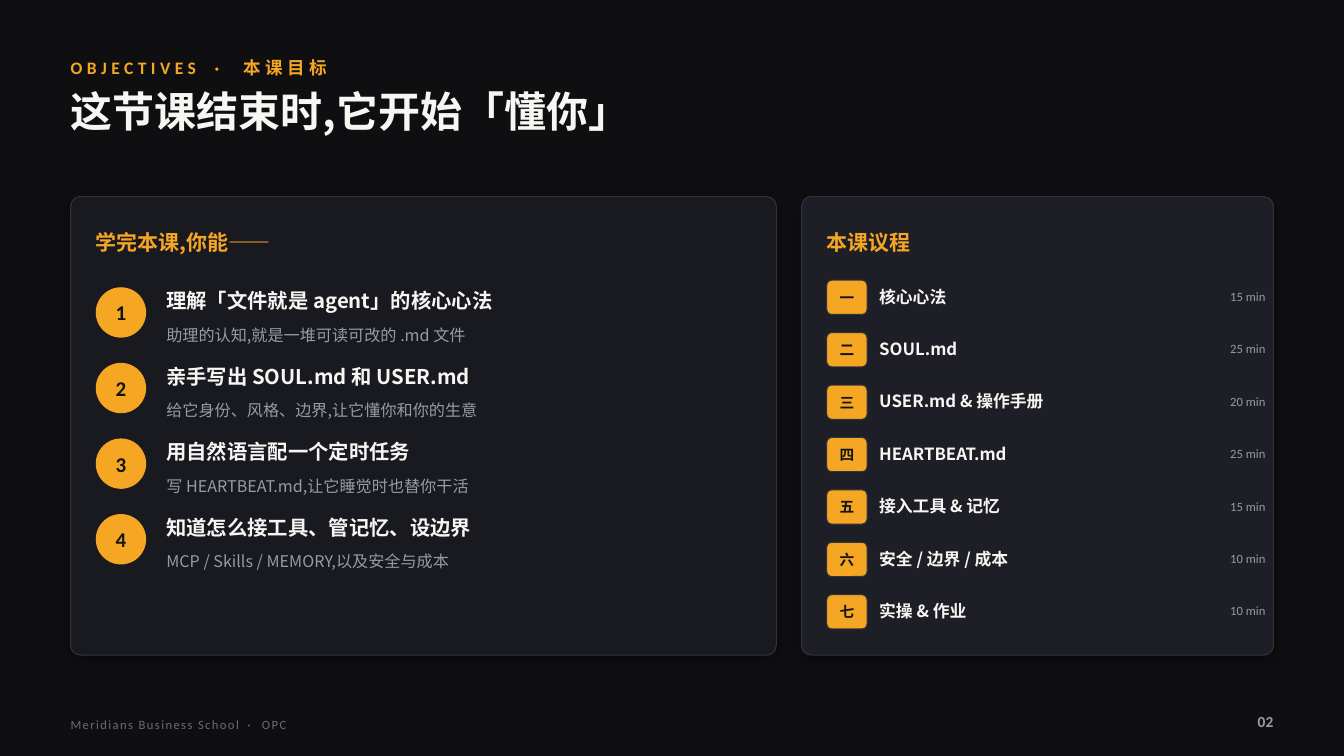
from dataclasses import dataclass

from lxml.etree import SubElement
from pptx import Presentation
from pptx.dml.color import RGBColor
from pptx.enum.shapes import MSO_SHAPE as Shape
from pptx.enum.text import MSO_ANCHOR as Anchor, PP_ALIGN as Align
from pptx.oxml.ns import qn
from pptx.util import Pt

PX = 9144  # 100 px to the inch


@dataclass(frozen=True)
class TextStyle:
    size: float
    color: str
    bold: bool = False
    font: str = "Noto Sans CJK SC"
    spacing: float = 0


class Theme:
    background = "0F0F12"
    panel = "191920"
    panel_raised = "1E1E26"
    border = "33333E"
    accent = "F5A623"
    ink = "141410"
    white = "F6F6F3"
    muted = "9A9AA6"
    faint = "6B6B76"
    east_asian = "Noto Sans CJK SC"

    kicker = TextStyle(12.5, accent, True, "Calibri", 3.2)
    title = TextStyle(30, white, True)
    heading = TextStyle(15, accent, True)
    number = TextStyle(15, ink, True, "Calibri")
    goal = TextStyle(14.5, white, True)
    detail = TextStyle(11.5, muted)
    chapter = TextStyle(10.5, ink, True)
    topic = TextStyle(12, white, True)
    minutes = TextStyle(9, muted, font="Calibri")
    footer = TextStyle(9, faint, font="Calibri", spacing=1)
    page = TextStyle(11, muted, True, "Calibri")


class SlideBuilder:
    def __init__(self, presentation, theme):
        self.theme = theme
        self.slide = presentation.slides.add_slide(presentation.slide_layouts[6])
        fill = self.slide.background.fill
        fill.solid()
        fill.fore_color.rgb = RGBColor.from_string(theme.background)

    def set_line(self, shape, pieces, style, align, anchor=Anchor.MIDDLE):
        """Fill a shape with one line; pieces are (text, letter spacing) pairs."""
        frame = shape.text_frame
        frame.word_wrap = True
        frame.vertical_anchor = anchor
        frame.margin_left = frame.margin_right = 0
        frame.margin_top = frame.margin_bottom = 0
        paragraph = frame.paragraphs[0]
        paragraph.alignment = align
        font = paragraph.font
        font.size, font.bold, font.name = Pt(style.size), style.bold, style.font
        font.color.rgb = RGBColor.from_string(style.color)
        defaults = paragraph._p.pPr.find(qn("a:defRPr"))
        SubElement(defaults, qn("a:ea")).set("typeface", self.theme.east_asian)
        for text, spacing in pieces:
            run = paragraph.add_run()
            run.text = text
            if spacing:
                run._r.get_or_add_rPr().set("spc", str(round(spacing * 100)))

    def text(self, x, y, width, height, text, style, align=Align.LEFT, anchor=Anchor.MIDDLE):
        box = self.slide.shapes.add_textbox(x * PX, y * PX, width * PX, height * PX)
        self.set_line(box, [(text, style.spacing)], style, align, anchor)

    def dotted_pair(self, x, y, width, height, left, right, style, dot_spacing):
        """Two labels with a widely spaced dot between them."""
        box = self.slide.shapes.add_textbox(x * PX, y * PX, width * PX, height * PX)
        pieces = [(left, style.spacing), (" · ", dot_spacing), (right, style.spacing)]
        self.set_line(box, pieces, style, Align.LEFT)

    def shape(self, kind, x, y, width, height, fill, radius=0, border=None):
        shape = self.slide.shapes.add_shape(kind, x * PX, y * PX, width * PX, height * PX)
        shape.shadow.inherit = False
        shape.fill.solid()
        shape.fill.fore_color.rgb = RGBColor.from_string(fill)
        if radius:
            shape.adjustments[0] = round(radius / min(width, height), 3)
        if border:
            shape.line.color.rgb = RGBColor.from_string(border)
            shape.line.width = Pt(0.75)
        else:
            shape.line.fill.background()
        return shape

    def panel(self, x, y, width, height, fill, heading):
        panel = self.shape(Shape.ROUNDED_RECTANGLE, x, y, width, height, fill, 10, self.theme.border)
        effects = panel._element.spPr.find(qn("a:effectLst"))
        shadow = SubElement(effects, qn("a:outerShdw"), blurRad=str(Pt(9)), dist=str(Pt(3)),
                            dir="5400000", algn="ctr", rotWithShape="0")
        color = SubElement(shadow, qn("a:srgbClr"), val="000000")
        SubElement(color, qn("a:alpha"), val="34000")
        self.text(x + 25, y + 25, width - 50, 40, heading, self.theme.heading)

    def goal(self, x, y, number, goal, detail):
        theme = self.theme
        circle = self.shape(Shape.OVAL, x, y, 50, 50, theme.accent)
        self.set_line(circle, [(number, 0)], theme.number, Align.CENTER)
        self.text(x + 70, y - 4, 580, 34, goal, theme.goal)
        self.text(x + 70, y + 30, 580, 34, detail, theme.detail)

    def agenda_item(self, x, y, chapter, topic, minutes):
        theme = self.theme
        badge = self.shape(Shape.ROUNDED_RECTANGLE, x, y, 40, 34, theme.accent, 5, theme.border)
        self.set_line(badge, [(chapter, 0)], theme.chapter, Align.CENTER)
        self.text(x + 52, y - 4, 310, 40, topic, theme.topic)
        self.text(x + 350, y - 4, 85, 40, f"{minutes} min", theme.minutes, Align.RIGHT)


GOALS = [
    ("理解「文件就是 agent」的核心心法", "助理的认知,就是一堆可读可改的 .md 文件"),
    ("亲手写出 SOUL.md 和 USER.md", "给它身份、风格、边界,让它懂你和你的生意"),
    ("用自然语言配一个定时任务", "写 HEARTBEAT.md,让它睡觉时也替你干活"),
    ("知道怎么接工具、管记忆、设边界", "MCP / Skills / MEMORY,以及安全与成本"),
]
AGENDA = [
    ("一", "核心心法", 15),
    ("二", "SOUL.md", 25),
    ("三", "USER.md & 操作手册", 20),
    ("四", "HEARTBEAT.md", 25),
    ("五", "接入工具 & 记忆", 15),
    ("六", "安全 / 边界 / 成本", 10),
    ("七", "实操 & 作业", 10),
]


def main():
    presentation = Presentation()
    presentation.slide_width, presentation.slide_height = 1333 * PX, 750 * PX
    theme = Theme()
    builder = SlideBuilder(presentation, theme)

    # Header
    builder.dotted_pair(70, 52, 1193, 30, "OBJECTIVES", "本课目标", theme.kicker, 7.2)
    builder.text(70, 85, 1193, 90, "这节课结束时,它开始「懂你」", theme.title, anchor=Anchor.TOP)

    # Learning goals
    builder.panel(70, 195, 700, 455, theme.panel, "学完本课,你能——")
    for index, (goal, detail) in enumerate(GOALS):
        builder.goal(95, 285 + 75 * index, str(index + 1), goal, detail)

    # Agenda
    builder.panel(795, 195, 468, 455, theme.panel_raised, "本课议程")
    for index, item in enumerate(AGENDA):
        builder.agenda_item(820, 278 + 52 * index, *item)

    # Footer
    builder.dotted_pair(70, 704, 700, 30, "Meridians Business School", "OPC", theme.footer, 3)
    builder.text(1183, 700, 80, 32, "02", theme.page, Align.RIGHT)

    presentation.save("out.pptx")


if __name__ == "__main__":
    main()
